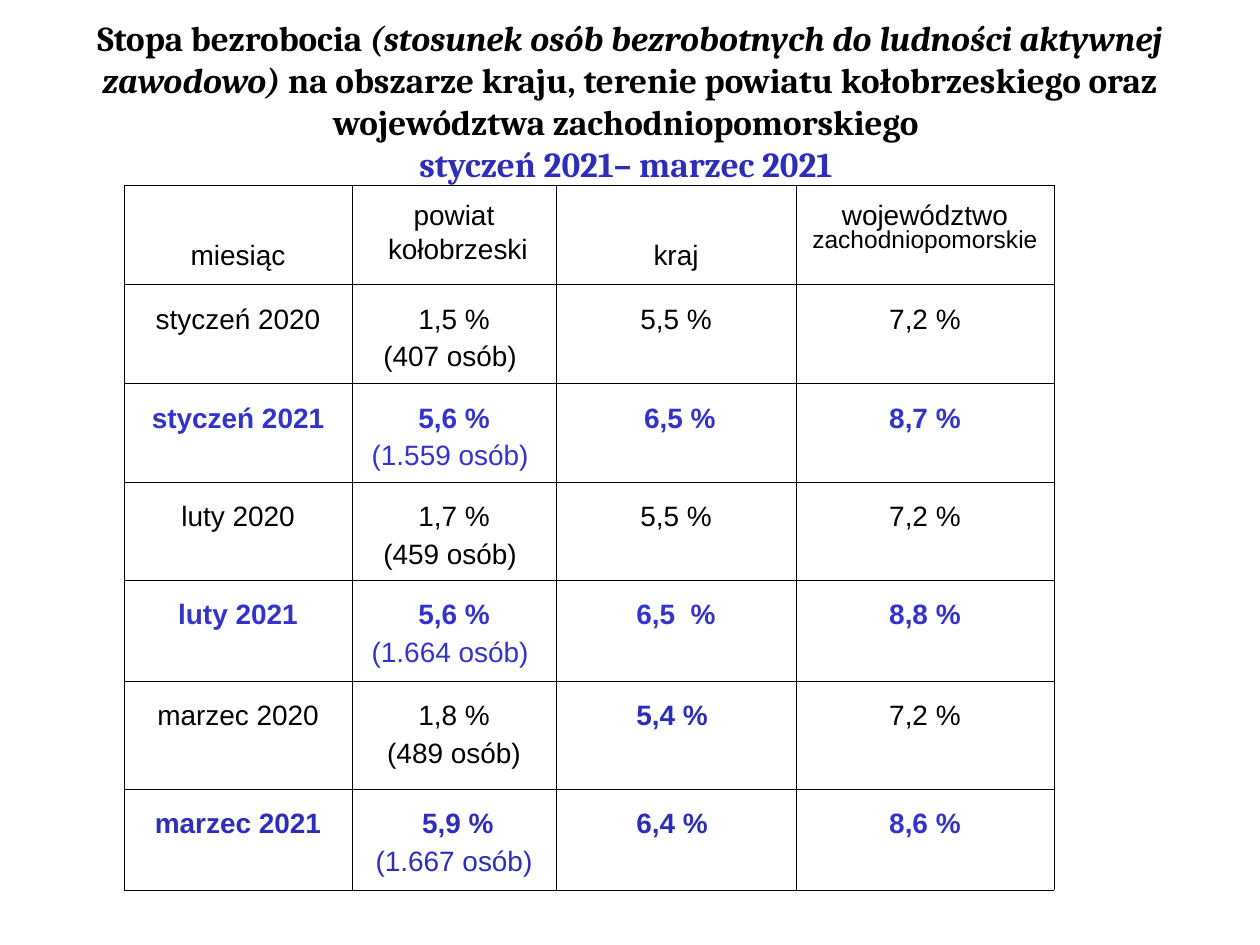
from lxml.etree import SubElement
from pptx import Presentation
from pptx.dml.color import RGBColor
from pptx.enum.text import MSO_ANCHOR, PP_ALIGN
from pptx.oxml.ns import qn
from pptx.util import Emu, Pt

BLACK, BLUE, NAVY = "000000", "3333CC", "2D2DB9"
COLS = [228, 204, 240, 258]
ROWS = [99, 99, 99, 97, 101, 108, 101]
HEADER_TOP, LOW_HEADER_TOP, BODY_TOP = 20, 60, 25

TITLE = [
    ("Stopa bezrobocia ", BLACK, False),
    ("(stosunek osób bezrobotnych do ludności aktywnej zawodowo)", BLACK, True),
    (" na obszarze kraju, terenie powiatu kołobrzeskiego oraz "
     "województwa zachodniopomorskiego \v", BLACK, False),
    ("styczeń 2021– marzec 2021 ", NAVY, False),
]
HEADERS = [
    ([[("miesiąc", 16)]], LOW_HEADER_TOP),
    ([[("powiat", 16)], [(" kołobrzeski", 16)]], HEADER_TOP),
    ([[("kraj", 16)]], LOW_HEADER_TOP),
    ([[("województwo ", 16), ("zachodniopomorskie", 14)]], HEADER_TOP),
]
RATES = [
    (BLACK, "styczeń 2020", "1,5 %\n(407 osób) ", "5,5 %", "7,2 %"),
    (BLUE, "styczeń 2021", "5,6 %\n(1.559 osób) ", " 6,5 %", "8,7 %"),
    (BLACK, "luty 2020", "1,7 %\n(459 osób) ", "5,5 %", "7,2 %"),
    (BLUE, "luty 2021", "5,6 %\n(1.664 osób) ", "6,5  %", "8,8 %"),
    (BLACK, "marzec 2020", "1,8 %\n(489 osób)", "5,4 % ", "7,2 %"),
    (NAVY, "marzec 2021", " 5,9 %\n(1.667 osób)", "6,4 % ", "8,6 %"),
]
COLOR_EXCEPTIONS = {(5, 2): NAVY, (6, 3): BLUE}


def px(n):
    return Emu(round(n * 914400 / 126))


def rgb(color):
    return RGBColor.from_string(color)


class Deck:
    title_font, body_font = "Cambria", "Arial"
    hairline, outline = 0.11, 0.23

    def __init__(self, prs):
        self.slide = prs.slides.add_slide(prs.slide_layouts[6])

    def title(self, x, y, w, h, parts):
        tf = self.slide.shapes.add_textbox(px(x), px(y), px(w), px(h)).text_frame
        tf.word_wrap = True
        tf.vertical_anchor = MSO_ANCHOR.MIDDLE
        p = tf.paragraphs[0]
        p.alignment = PP_ALIGN.CENTER
        p.font.name, p.font.size, p.font.bold = self.title_font, Pt(20), True
        for text, color, italic in parts:
            head, *rest = text.split("\v")
            r = p.add_run()
            r.text = head
            r.font.italic = italic
            r.font.color.rgb = rgb(color)
            if rest:
                p.add_line_break()

    def table(self, x, y, cols, rows):
        frame = self.slide.shapes.add_table(
            len(rows), len(cols), px(x), px(y), px(sum(cols)), px(sum(rows)))
        table = frame.table
        table.first_row = table.horz_banding = False
        for column, width in zip(table.columns, cols):
            column.width = px(width)
        for row, height in zip(table.rows, rows):
            row.height = px(height)
        for i in range(len(rows)):
            for j in range(len(cols)):
                edges = {"lnL": j == 0, "lnR": j == len(cols) - 1,
                         "lnT": i == 0, "lnB": False}
                self.borders(table.cell(i, j), edges)
        return table

    def borders(self, cell, edges):
        tc_pr = cell._tc.get_or_add_tcPr()
        for tag, outer in edges.items():
            width = Pt(self.outline if outer else self.hairline)
            ln = SubElement(tc_pr, qn("a:" + tag), w=str(width))
            fill = SubElement(ln, qn("a:solidFill"))
            SubElement(fill, qn("a:srgbClr"), val=BLACK)
        cell.fill.background()

    def paragraph(self, p, before, color, bold=False):
        p.alignment = PP_ALIGN.CENTER
        p.line_spacing, p.space_before = 0.81, Pt(before)
        p.font.name, p.font.size, p.font.bold = self.body_font, Pt(16), bold
        p.font.color.rgb = rgb(color)

    def header_cell(self, cell, lines, top):
        cell.margin_top = px(top)
        tf = cell.text_frame
        for k, runs in enumerate(lines):
            p = tf.add_paragraph() if k else tf.paragraphs[0]
            self.paragraph(p, 5, BLACK)
            for text, size in runs:
                r = p.add_run()
                r.text = text
                if size != 16:
                    r.font.size = Pt(size)

    def body_cell(self, cell, text, color):
        cell.margin_top = px(BODY_TOP)
        cell.text = text
        for k, p in enumerate(cell.text_frame.paragraphs):
            self.paragraph(p, 7, color, bold=color != BLACK and k == 0)


def main():
    prs = Presentation()
    prs.slide_width, prs.slide_height = px(1260), px(945)
    deck = Deck(prs)
    deck.title(63, 16, 1134, 169, TITLE)
    table = deck.table(124, 185, COLS, ROWS)
    for j, (lines, top) in enumerate(HEADERS):
        deck.header_cell(table.cell(0, j), lines, top)
    for i, (color, *texts) in enumerate(RATES, 1):
        for j, text in enumerate(texts):
            deck.body_cell(table.cell(i, j), text, COLOR_EXCEPTIONS.get((i, j), color))
    prs.save("out.pptx")


if __name__ == "__main__":
    main()
